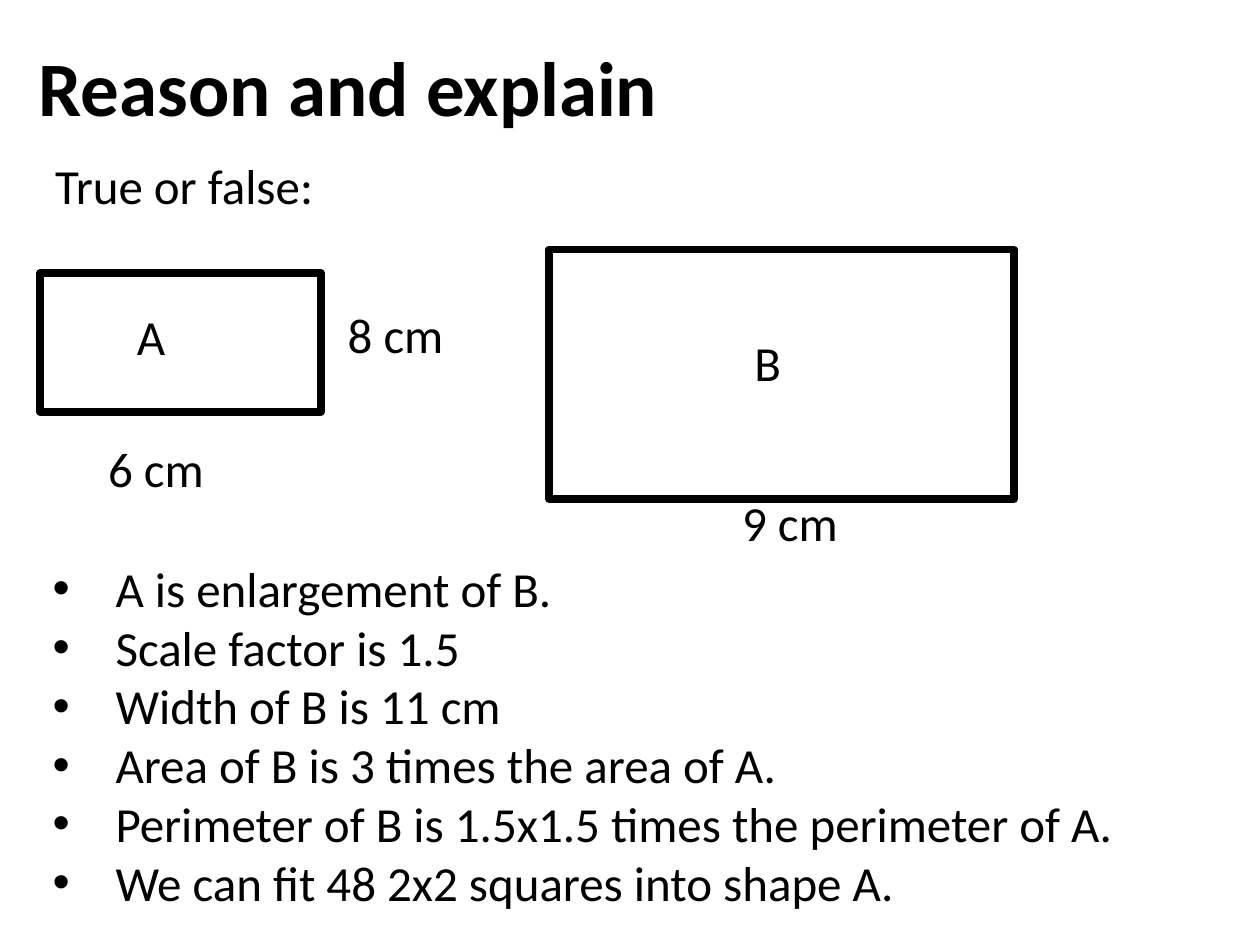
import pptx
import pptx.dml.color
import pptx.enum.shapes
import pptx.enum.text
import pptx.oxml
import pptx.oxml.ns
import pptx.util

Cm = pptx.util.Cm
Pt = pptx.util.Pt
Shape = pptx.enum.shapes.MSO_SHAPE
Anchor = pptx.enum.text.MSO_ANCHOR


def tint(code):
    return pptx.dml.color.RGBColor.from_string(code)


class Sheet:
    """Draws styled elements on the current slide."""

    ink = "000000"
    paper = "FFFFFF"
    font = {"name": "Calibri", "size": Pt(28), "bold": False}

    def __init__(self, slide):
        self.slide = slide

    def text(self, lines, box, anchor=Anchor.TOP, wrap=True, bullet=False, space=None, **style):
        frame = self.slide.shapes.add_textbox(*map(Cm, box)).text_frame
        frame.word_wrap = wrap
        frame.vertical_anchor = anchor
        frame.text = "\n".join(lines)
        for para in frame.paragraphs:
            if bullet:
                self.bullet(para)
            if space:
                para.line_spacing = space
            for key, value in {**self.font, **style}.items():
                setattr(para.font, key, value)
            para.font.color.rgb = tint(self.ink)

    def bullet(self, para):
        props = para._p.get_or_add_pPr()
        props.set("marL", str(Cm(1.27)))
        props.set("indent", str(-Cm(1.27)))
        space = pptx.oxml.ns.nsdecls("a")
        for tag in ('buFont {} typeface="Arial"', 'buChar {} char="•"'):
            props.append(pptx.oxml.parse_xml(f"<a:{tag.format(space)}/>"))

    def rect(self, box):
        shape = self.slide.shapes.add_shape(Shape.RECTANGLE, *map(Cm, box))
        shape.shadow.inherit = False
        shape.fill.solid()
        shape.fill.fore_color.rgb = tint(self.paper)
        shape.line.color.rgb = tint(self.ink)
        shape.line.width = Pt(4.5)


def main():
    deck = pptx.Presentation()
    deck.slide_width, deck.slide_height = Cm(25.4), Cm(19.05)
    sheet = Sheet(deck.slides.add_slide(deck.slide_layouts[6]))

    sheet.text(["Reason and explain"], (0.53, 0, 21.89, 3.68),
               anchor=Anchor.MIDDLE, space=0.9, size=Pt(44), bold=True)
    sheet.text(["True or false:"], (0.86, 3.02, 23.7, 2.64))

    for box in ((11.07, 5.03, 9.37, 5.03), (0.81, 5.51, 5.66, 2.79)):
        sheet.rect(box)

    labels = {
        "8 cm": (6.76, 6.02, 3.28),
        "6 cm": (1.93, 8.71, 3.12),
        "A": (2.51, 6.05, 3.28),
        "B": (14.96, 6.58, 3.28),
    }
    for word, place in labels.items():
        sheet.text([word], (*place, 1.45))
    sheet.text(["9 cm"], (14.71, 9.8, 2.46, 1.45), wrap=False)

    claims = [
        "A is enlargement of B.",
        "Scale factor is 1.5",
        "Width of B is 11 cm",
        "Area of B is 3 times the area of A.",
        "Perimeter of B is 1.5x1.5 times the perimeter of A.",
        "We can fit 48 2x2 squares into shape A.",
    ]
    sheet.text(claims, (0.81, 11.13, 21.95, 7.44), bullet=True)
    deck.save("out.pptx")


if __name__ == "__main__":
    main()
